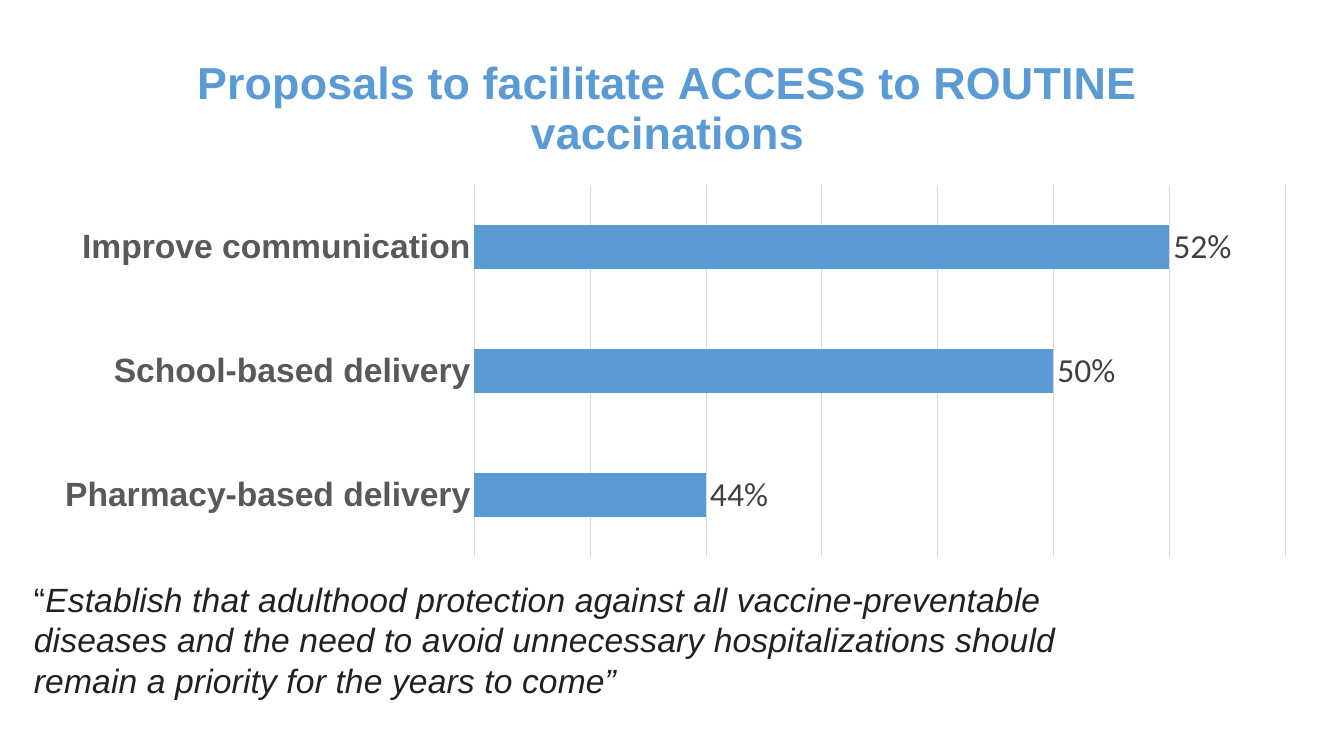
from lxml.etree import SubElement
from pptx import Presentation
from pptx.chart.data import CategoryChartData
from pptx.dml.color import RGBColor
from pptx.enum.chart import XL_CHART_TYPE, XL_LABEL_POSITION, XL_TICK_MARK
from pptx.enum.text import MSO_AUTO_SIZE
from pptx.oxml.ns import qn
from pptx.util import Inches, Pt

PX_PER_INCH = 100.8
COLORS = {"blue": "5B9BD5", "grid": "D9D9D9", "category": "595959",
          "value": "404040", "quote": "202124", "black": "000000"}
PROPOSALS = {"Pharmacy-based delivery": 0.44,
             "School-based delivery": 0.5,
             "Improve communication": 0.52}
QUOTE = ("Establish that adulthood protection against all vaccine-preventable "
         "diseases and the need to avoid unnecessary hospitalizations should "
         "remain a priority for the years to come”")


def px(length):
    return Inches(length / PX_PER_INCH)


def color(name):
    return RGBColor.from_string(COLORS[name])


def style_font(font, size, color_name, name="Arial", bold=False, italic=False):
    font.size, font.name = Pt(size), name
    font.bold, font.italic = bold, italic
    font.color.rgb = color(color_name)


def style_line(line):
    line.color.rgb = color("grid")
    line.width = Pt(0.75)


def place_plot(chart, x, y, w, h):
    """Fix the inner plot area, in fractions of the chart."""
    plot_area = chart.plots[0]._element.getparent()
    for old in plot_area.findall(qn("c:layout")):
        plot_area.remove(old)
    layout = SubElement(plot_area, qn("c:layout"))
    plot_area.insert(0, layout)
    manual = SubElement(layout, qn("c:manualLayout"))
    settings = {"layoutTarget": "inner", "xMode": "edge", "yMode": "edge",
                "x": x, "y": y, "w": w, "h": h}
    for tag, value in settings.items():
        SubElement(manual, qn(f"c:{tag}")).set("val", str(value))


def add_proposals_chart(slide, left, top, width, height):
    data = CategoryChartData(number_format="0%")
    data.categories = list(PROPOSALS)
    data.add_series("Series 1", list(PROPOSALS.values()))
    chart = slide.shapes.add_chart(XL_CHART_TYPE.BAR_CLUSTERED, px(left), px(top),
                                   px(width), px(height), data).chart
    style_font(chart.font, 10, "black", "Calibri")
    chart.has_legend = False

    # Heading
    chart.has_title = True
    heading = chart.chart_title.text_frame
    heading.text = "Proposals to facilitate ACCESS to ROUTINE vaccinations"
    style_font(heading.paragraphs[0].runs[0].font, 32, "blue", bold=True)
    chart.chart_title.include_in_layout = False

    # Axes
    proposals = chart.category_axis
    proposals.major_tick_mark = proposals.minor_tick_mark = XL_TICK_MARK.NONE
    style_font(proposals.tick_labels.font, 24, "category", bold=True)
    style_line(proposals.format.line)
    share = chart.value_axis
    share.minimum_scale, share.maximum_scale, share.major_unit = 0.4, 0.54, 0.02
    share.has_major_gridlines = True
    style_line(share.major_gridlines.format.line)
    share.visible = False

    # Bars and their values
    bars = chart.plots[0]
    bars.gap_width = 182
    bars.vary_by_categories = False
    bars.series[0].format.fill.solid()
    bars.series[0].format.fill.fore_color.rgb = color("blue")
    values = bars.series[0].data_labels
    values.show_value = True
    values.position = XL_LABEL_POSITION.OUTSIDE_END
    values.number_format, values.number_format_is_linked = "0%", False
    style_font(values.font, 24, "value", "Calibri")
    place_plot(chart, 0.35, 0.29, 0.63, 0.69)


def add_quote(slide, left, top, width, height):
    frame = slide.shapes.add_textbox(px(left), px(top), px(width), px(height)).text_frame
    frame.word_wrap = True
    frame.auto_size = MSO_AUTO_SIZE.SHAPE_TO_FIT_TEXT
    for text, italic in (("“", False), (QUOTE, True)):
        run = frame.paragraphs[0].add_run()
        run.text = text
        style_font(run.font, 24, "quote", italic=italic)
        run._r.get_or_add_rPr().set("spc", "10")


def main():
    deck = Presentation()
    deck.slide_width, deck.slide_height = px(1344), px(756)
    slide = deck.slides.add_slide(deck.slide_layouts[6])
    add_proposals_chart(slide, 24, 29, 1287, 539)
    add_quote(slide, 24, 574, 1147, 132)
    deck.save("out.pptx")


if __name__ == "__main__":
    main()
